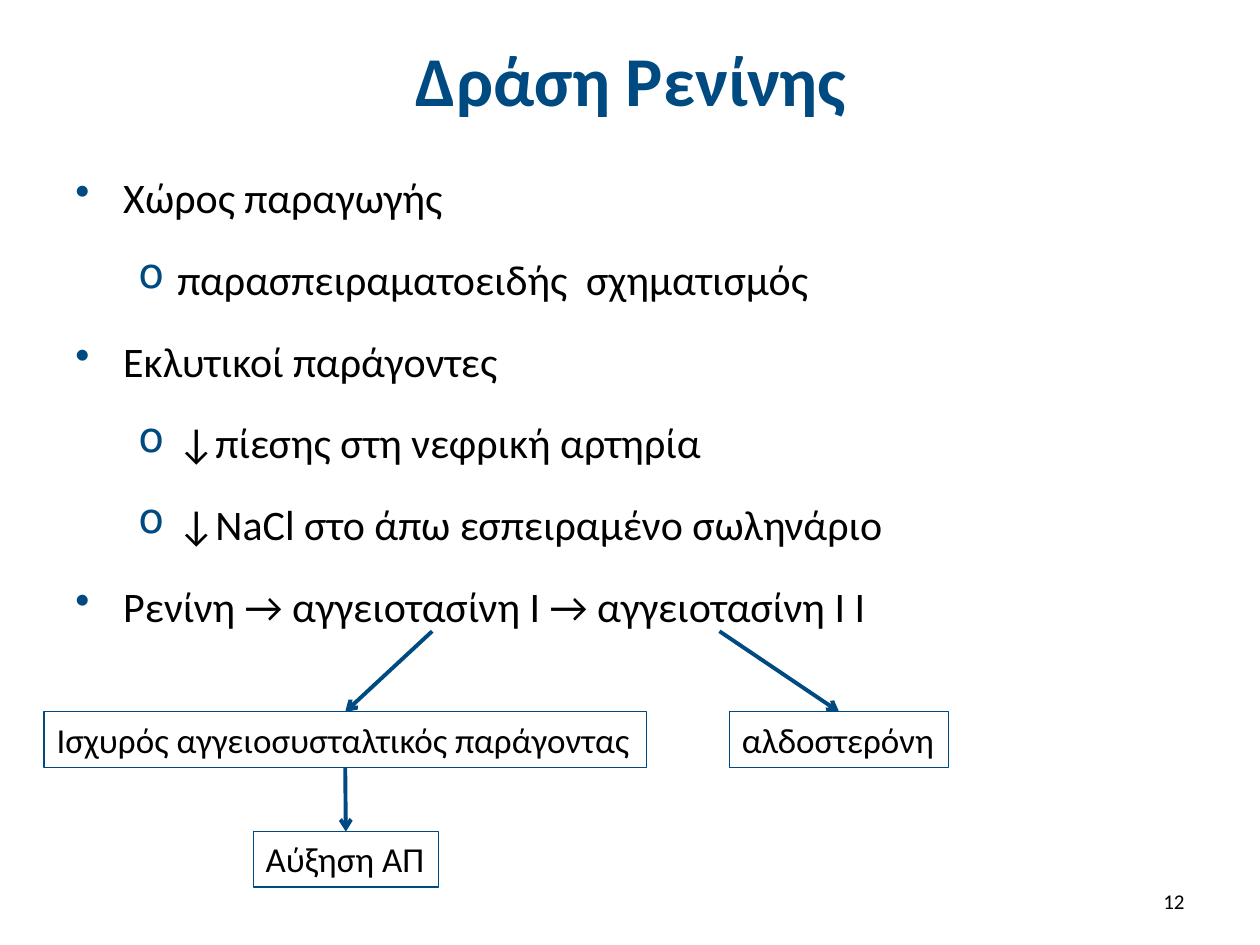
from lxml import etree
from pptx import Presentation
from pptx.dml.color import RGBColor
from pptx.enum.shapes import MSO_CONNECTOR, MSO_SHAPE
from pptx.enum.text import MSO_ANCHOR, MSO_AUTO_SIZE, PP_ALIGN
from pptx.oxml.ns import qn
from pptx.util import Inches, Pt

RECTANGLE = MSO_SHAPE.RECTANGLE
STRAIGHT = MSO_CONNECTOR.STRAIGHT
MIDDLE, TOP = MSO_ANCHOR.MIDDLE, MSO_ANCHOR.TOP
LEFT, CENTER, RIGHT = PP_ALIGN.LEFT, PP_ALIGN.CENTER, PP_ALIGN.RIGHT
FIT_SHAPE = MSO_AUTO_SIZE.SHAPE_TO_FIT_TEXT
BLUE, BLACK = "004A82", "000000"


def rgb(color):
    return RGBColor.from_string(color)


def style(paragraph, size, color=BLACK, bold=False, align=LEFT):
    paragraph.alignment = align
    font = paragraph.font
    font.name, font.size, font.bold = "Calibri", Pt(size), bold
    font.color.rgb = rgb(color)


prs = Presentation()
prs.slide_width, prs.slide_height = Inches(10), Inches(7.5)
slide = prs.slides.add_slide(prs.slide_layouts[6])
shapes = slide.shapes

# Title and slide number
for text, box, size, color, bold, align in [
    ("Δράση Ρενίνης", (0.51, 0.13, 9, 0.99), 40, BLUE, True, CENTER),
    ("12", (7.17, 6.95, 2.33, 0.4), 12, BLACK, False, RIGHT),
]:
    frame = shapes.add_textbox(*map(Inches, box)).text_frame
    frame.word_wrap = True
    frame.vertical_anchor = MIDDLE
    frame.text = text
    style(frame.paragraphs[0], size, color, bold, align)

# Bulleted outline
outline = [
    (0, "Χώρος παραγωγής"),
    (1, "παρασπειραματοειδής  σχηματισμός"),
    (0, "Εκλυτικοί παράγοντες"),
    (1, "↓πίεσης στη νεφρική αρτηρία"),
    (1, "↓NaCl στο άπω εσπειραμένo σωληνάριο"),
    (0, "Ρενίνη → αγγειοτασίνη Ι → αγγειοτασίνη Ι Ι"),
]
levels = [("•", 0.38, -0.38), ("o", 0.81, -0.31)]
body = shapes.add_textbox(Inches(0.5), Inches(1.31), Inches(9), Inches(3.94)).text_frame
body.word_wrap = True
body.vertical_anchor = TOP
for index, (level, text) in enumerate(outline):
    paragraph = body.add_paragraph() if index else body.paragraphs[0]
    paragraph.text = text
    paragraph.level = level
    if index:
        paragraph.space_before = Pt(18)
    bullet, margin, indent = levels[level]
    props = paragraph._p.get_or_add_pPr()
    props.set("marL", str(Inches(margin)))
    props.set("indent", str(Inches(indent)))
    bullet_color = etree.SubElement(props, qn("a:buClr"))
    etree.SubElement(bullet_color, qn("a:srgbClr"), val=BLUE)
    etree.SubElement(props, qn("a:buChar"), char=bullet)
    style(paragraph, 24)

# Effects of angiotensin
effects = []
for text, left, top, width in [
    ("Ισχυρός αγγειοσυσταλτικός παράγοντας", 0.35, 5.65, 4.78),
    ("αλδοστερόνη", 5.79, 5.65, 1.74),
    ("Αύξηση ΑΠ", 2.01, 6.6, 1.47),
]:
    effect = shapes.add_shape(
        RECTANGLE, Inches(left), Inches(top), Inches(width), Inches(0.44))
    effect.shadow.inherit = False
    effect.fill.background()
    effect.line.color.rgb = rgb(BLUE)
    effect.line.width = Pt(0.75)
    frame = effect.text_frame
    frame.word_wrap = False
    frame.auto_size = FIT_SHAPE
    frame.vertical_anchor = TOP
    frame.text = text
    style(frame.paragraphs[0], 20)
    effects.append(effect)

vasoconstrictor, aldosterone, pressure_rise = effects
for x, y, source, target in [
    (3.43, 5.01, None, vasoconstrictor),
    (2.75, 6.09, vasoconstrictor, pressure_rise),
    (5.71, 5.01, None, aldosterone),
]:
    arrow = shapes.add_connector(STRAIGHT, Inches(x), Inches(y), Inches(x), Inches(y))
    if source:
        arrow.begin_connect(source, 2)
    arrow.end_connect(target, 0)
    arrow.line.color.rgb = rgb(BLUE)
    arrow.line.width = Pt(2.25)
    etree.SubElement(arrow.line._get_or_add_ln(), qn("a:tailEnd"), type="arrow")
    etree.SubElement(arrow._element.spPr, qn("a:effectLst"))

prs.save("out.pptx")
